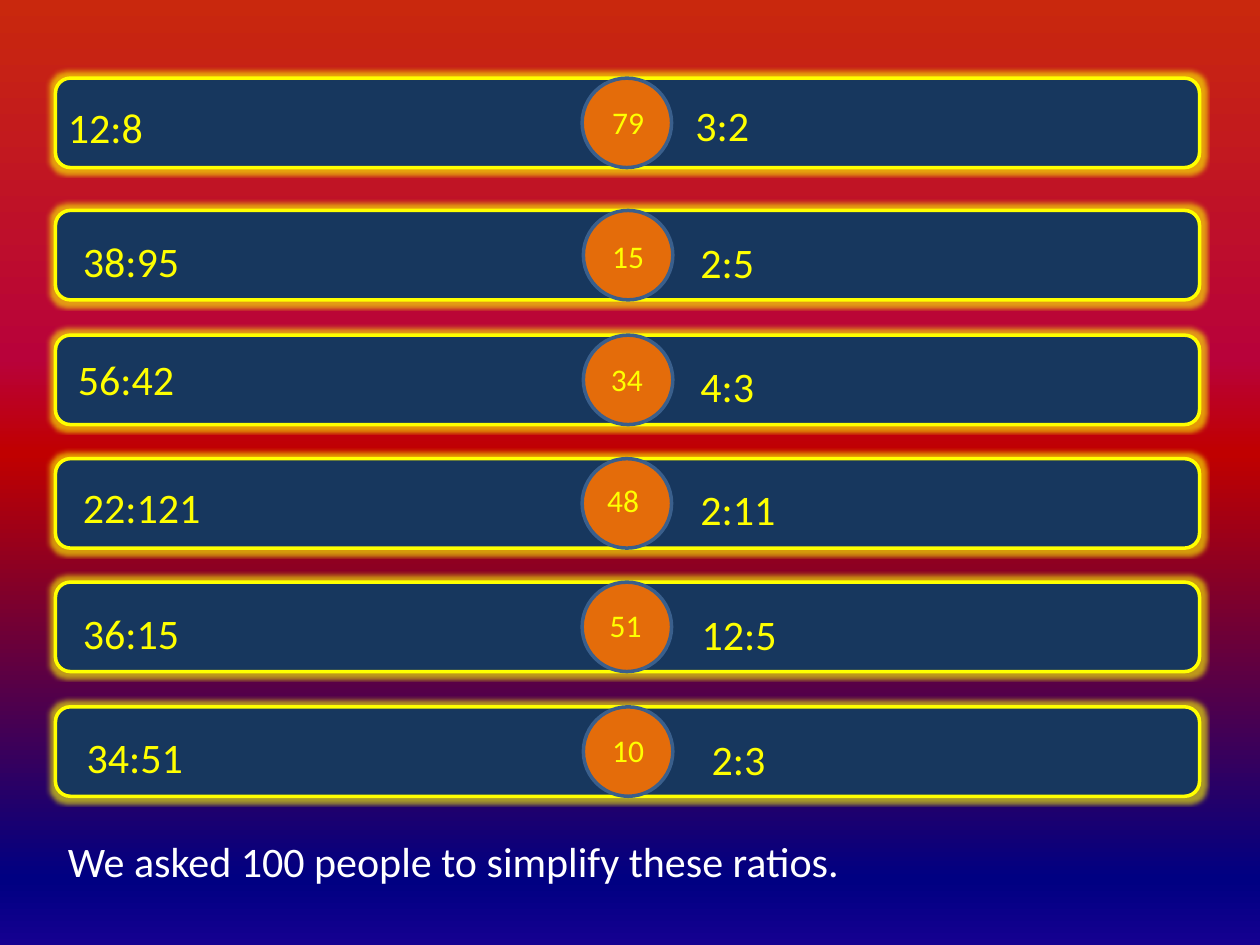
import copy

import lxml.etree
import pptx
import pptx.dml.color
import pptx.enum.shapes
import pptx.enum.text
import pptx.oxml.ns
import pptx.util

Inches = pptx.util.Inches
Pt = pptx.util.Pt
RGBColor = pptx.dml.color.RGBColor
MSO_SHAPE = pptx.enum.shapes.MSO_SHAPE
qn = pptx.oxml.ns.qn

NAVY = RGBColor(0x17, 0x37, 0x5E)
YELLOW = RGBColor(0xFF, 0xFF, 0x00)
ORANGE = RGBColor(0xE4, 0x6C, 0x0A)
BLUE = RGBColor(0x3A, 0x5F, 0x8C)
WHITE = RGBColor(0xFF, 0xFF, 0xFF)
BACKGROUND_STOPS = [
    (0, RGBColor(0xC9, 0x28, 0x0D)),
    (0.38, RGBColor(0xB8, 0x02, 0x3A)),
    (0.48, RGBColor(0xC0, 0x00, 0x00)),
    (0.93, RGBColor(0x00, 0x00, 0x82)),
    (1, RGBColor(0x15, 0x00, 0x90)),
]

BAR_LEFT, BAR_WIDTH, ROW_HEIGHT = 0.44, 9.08, 0.71

# bar top, circle left, then (text, left, top, width) for ratio, score, answer
ROWS = [
    (0.62, 4.62, ("12:8", 0.44, 0.76, 2.05), ("79", 4.76, 0.77, 0.47), ("3:2", 5.42, 0.74, 1.07)),
    (1.67, 4.63, ("38:95", 0.56, 1.82, 1.01), ("15", 4.76, 1.83, 0.47), ("2:5", 5.46, 1.83, 0.8)),
    (2.66, 4.63, ("56:42", 0.52, 2.76, 1.2), ("34", 4.75, 2.81, 0.47), ("4:3", 5.46, 2.81, 0.8)),
    (3.64, 4.62, ("22:121", 0.56, 3.77, 2.7), ("48", 4.72, 3.77, 0.47), ("2:11", 5.46, 3.79, 0.96)),
    (4.62, 4.62, ("36:15", 0.56, 4.77, 1.16), ("51", 4.74, 4.76, 0.47), ("12:5", 5.47, 4.78, 1.02)),
    (5.61, 4.63, ("34:51", 0.59, 5.76, 1.13), ("10", 4.76, 5.75, 0.47), ("2:3", 5.55, 5.77, 0.79)),
]


def set_background(s):
    fill = s.background.fill
    fill.gradient()
    fill.gradient_angle = 270
    stops = next(s.element.iter(qn("a:gsLst")))
    while len(stops) < len(BACKGROUND_STOPS):
        stops.append(copy.deepcopy(stops[0]))
    for stop, (position, color) in zip(fill.gradient_stops, BACKGROUND_STOPS):
        stop.position = position
        stop.color.rgb = color


def add_panel(s, kind, left, top, width, fill, line):
    sp = s.shapes.add_shape(kind, Inches(left), Inches(top), Inches(width), Inches(ROW_HEIGHT))
    sp.shadow.inherit = False
    sp.fill.solid()
    sp.fill.fore_color.rgb = fill
    sp.line.color.rgb = line
    sp.line.width = Pt(2)
    return sp


def add_glow(sp, color, radius, alpha):
    effects = next(sp.element.iter(qn("a:effectLst")))
    glow = lxml.etree.SubElement(effects, qn("a:glow"), rad=str(radius))
    rgb = lxml.etree.SubElement(glow, qn("a:srgbClr"), val=str(color))
    lxml.etree.SubElement(rgb, qn("a:alpha"), val=str(alpha * 1000))


def add_label(s, text, left, top, width, size=24, color=YELLOW):
    height = 0.5 if size == 24 else 0.4
    sp = s.shapes.add_textbox(Inches(left), Inches(top), Inches(width), Inches(height))
    tf = sp.text_frame
    tf.word_wrap = True
    tf.auto_size = pptx.enum.text.MSO_AUTO_SIZE.SHAPE_TO_FIT_TEXT
    tf.text = text
    r = tf.paragraphs[0].runs[0]
    r.font.name = "Calibri"
    r.font.size = Pt(size)
    r.font.color.rgb = color


def add_row(s, top, circle_left, ratio, score, answer):
    bar = add_panel(s, MSO_SHAPE.ROUNDED_RECTANGLE, BAR_LEFT, top, BAR_WIDTH, NAVY, YELLOW)
    add_glow(bar, YELLOW, Pt(5), 60)
    add_panel(s, MSO_SHAPE.OVAL, circle_left, top, ROW_HEIGHT, ORANGE, BLUE)
    add_label(s, *ratio)
    add_label(s, *score, size=18)
    add_label(s, *answer)


def main():
    prs = pptx.Presentation()
    prs.slide_width = Inches(10)
    prs.slide_height = Inches(7.5)
    s = prs.slides.add_slide(prs.slide_layouts[6])
    set_background(s)
    for row in ROWS:
        add_row(s, *row)
    add_label(s, "We asked 100 people to simplify these ratios.", 0.44, 6.58, 8.35, color=WHITE)
    prs.save("out.pptx")


if __name__ == "__main__":
    main()
